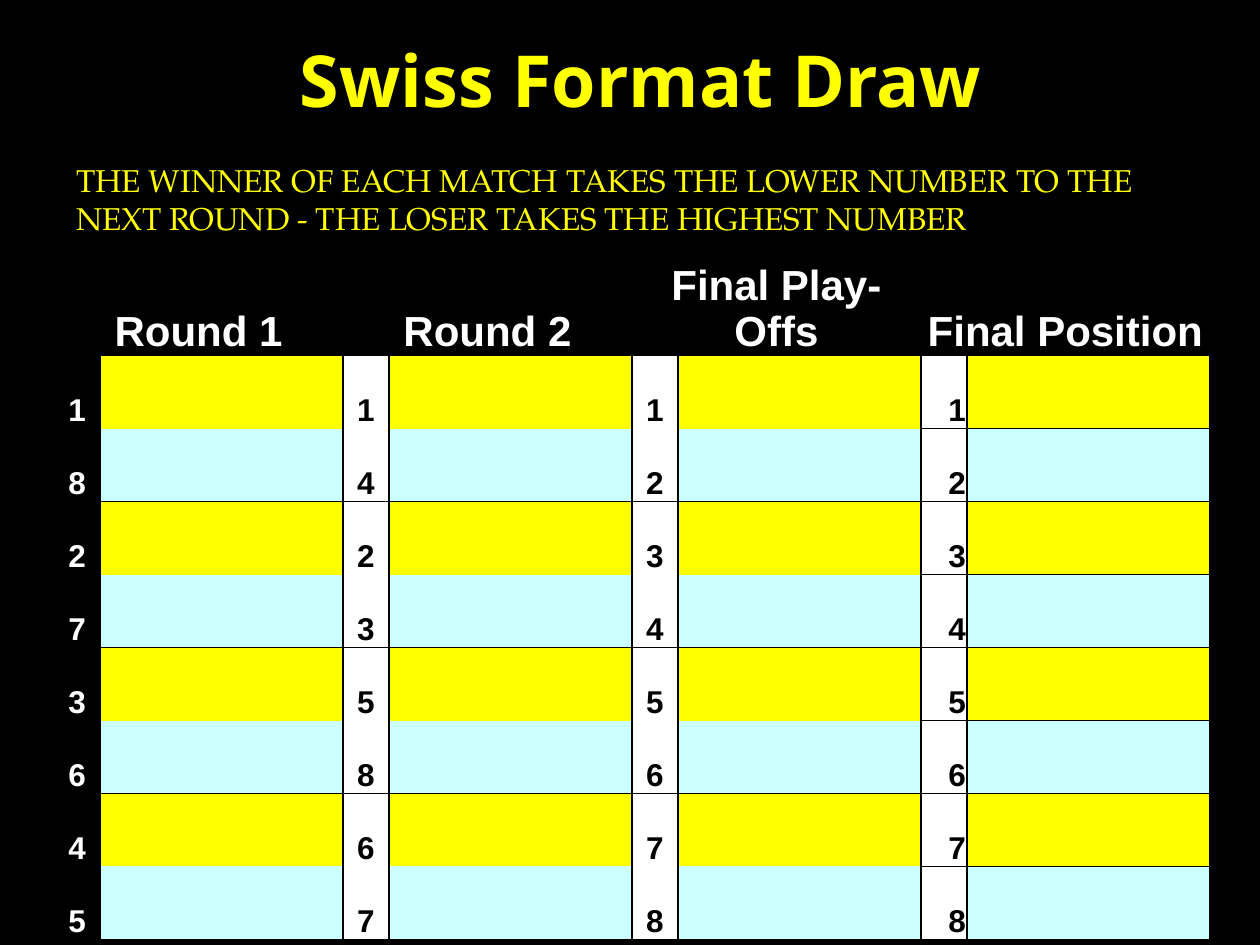
from lxml import etree
from pptx import Presentation, util as u
from pptx.dml.color import RGBColor
from pptx.enum import text
from pptx.oxml.ns import qn

PX = 914400 / 126
C = {"black": "000000", "white": "FFFFFF", "yellow": "FFFF00", "blue": "CCFFFF"}


def px(n):
    return u.Emu(round(n * PX))


def add_run(p, words, size, font, color, bold=False):
    r = p.add_run()
    r.text = words
    r.font.size = u.Pt(size)
    r.font.name = font
    r.font.bold = bold
    r.font.color.rgb = RGBColor.from_string(C[color])


prs = Presentation()
prs.slide_width, prs.slide_height = px(1260), px(945)
s = prs.slides.add_slide(prs.slide_layouts[5])
s.background.fill.solid()
s.background.fill.fore_color.rgb = RGBColor.from_string(C["black"])

title = s.shapes.title
title.left, title.top, title.width, title.height = px(74), px(0), px(1134), px(158)
tf = title.text_frame
tf.vertical_anchor = text.MSO_ANCHOR.MIDDLE
p = tf.paragraphs[0]
p.alignment = text.PP_ALIGN.CENTER
add_run(p, "Swiss Format Draw", 41, "Open Sans", "yellow", True)

headings = ["Round 1", "Round 2", "Final Play-Offs", "Final Position"]
draws = ["18273645", "14235867", "12345678", "12345678"]
table = s.shapes.add_table(9, 8, px(54), px(261), px(1156), px(674)).table
table.first_row = table.horz_banding = False
for i, col in enumerate(table.columns):
    col.width = px(243 if i % 2 else 46)
for i, row in enumerate(table.rows):
    row.height = px(73 if i else 90)

for y in range(9):
    for x in range(8):
        cell = table.cell(y, x)
        rnd, is_name = divmod(x, 2)
        if y == 0 and not is_name:
            cell.merge(table.cell(0, x + 1))

        if y == 0 or rnd == 3:
            sides = "LRTB"
        else:
            sides = "LRT" if y % 2 else "LRB"
        tcPr = cell._tc.get_or_add_tcPr()
        for side in "LRTB":
            ln = etree.SubElement(tcPr, qn("a:ln" + side), w="12700")
            if side in sides:
                fill = etree.SubElement(ln, qn("a:solidFill"))
                etree.SubElement(fill, qn("a:srgbClr"), val=C["black"])
            else:
                etree.SubElement(ln, qn("a:noFill"))

        if y == 0 or x == 0:
            cell.fill.background()
        else:
            color = ("yellow" if y % 2 else "blue") if is_name else "white"
            cell.fill.solid()
            cell.fill.fore_color.rgb = RGBColor.from_string(C[color])

        if is_name:
            continue
        cell.vertical_anchor = text.MSO_ANCHOR.BOTTOM
        cell.margin_left = cell.margin_right = cell.margin_top = px(1)
        cell.margin_bottom = 0
        p = cell.text_frame.paragraphs[0]
        p.alignment = text.PP_ALIGN.RIGHT if y and rnd == 3 else text.PP_ALIGN.CENTER
        if y == 0:
            add_run(p, headings[rnd], 24, "Arial", "white", True)
        else:
            add_run(p, draws[rnd][y - 1], 18, "Arial", "black" if x else "white", True)

tf = s.shapes.add_textbox(px(64), px(155), px(1171), px(89)).text_frame
tf.word_wrap = True
add_run(tf.paragraphs[0],
        "THE WINNER OF EACH MATCH TAKES THE LOWER NUMBER TO THE NEXT ROUND"
        " - THE LOSER TAKES THE HIGHEST NUMBER",
        18, "TeX Gyre Pagella", "yellow")

prs.save("out.pptx")
